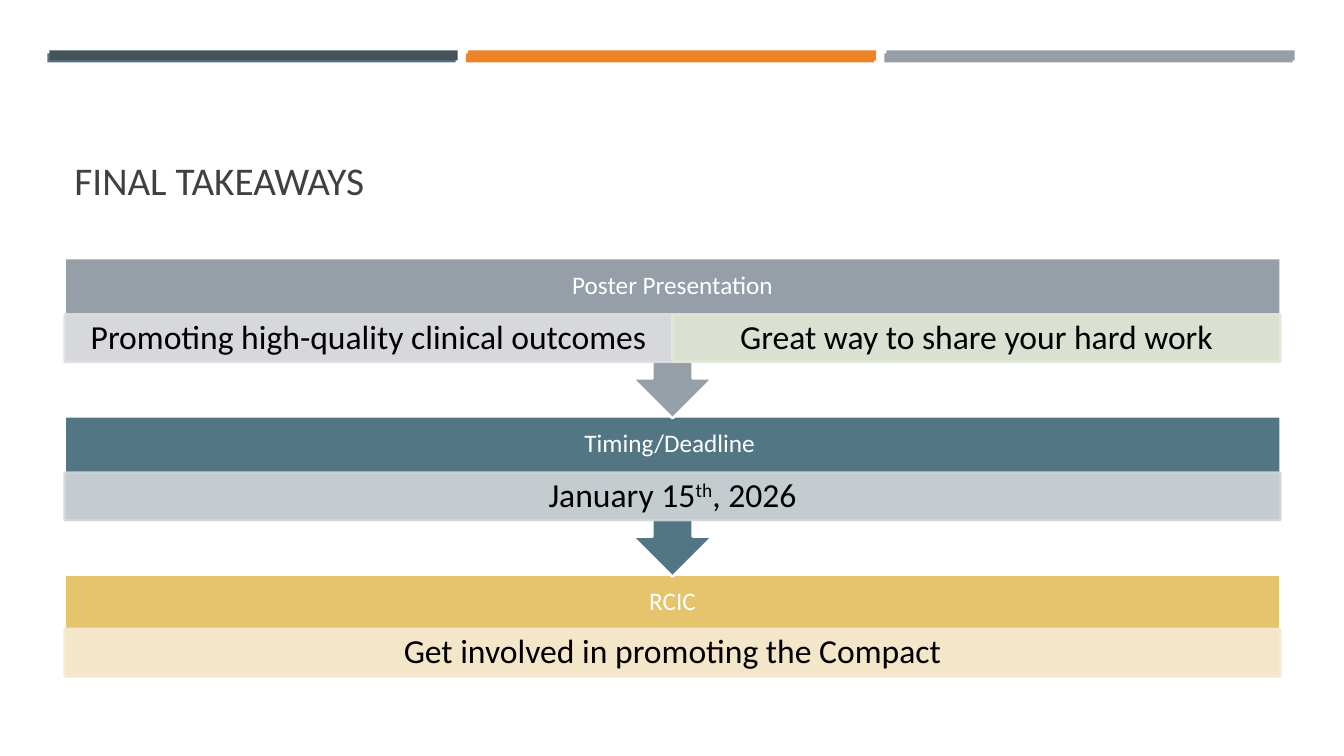
import pptx
import pptx.dml.color
import pptx.enum.shapes
import pptx.enum.text
import pptx.oxml.ns
import pptx.util
from lxml import etree

Inches = pptx.util.Inches
RGBColor = pptx.dml.color.RGBColor
SHAPES = pptx.enum.shapes.MSO_SHAPE
ANCHOR = pptx.enum.text.MSO_ANCHOR
ALIGN = pptx.enum.text.PP_ALIGN

WHITE = RGBColor(0xFF, 0xFF, 0xFF)
BLACK = RGBColor(0x00, 0x00, 0x00)
TITLE_GRAY = RGBColor(0x40, 0x40, 0x40)
SLATE = RGBColor(0x46, 0x53, 0x59)
TEAL = RGBColor(0x53, 0x76, 0x85)
ORANGE = RGBColor(0xED, 0x84, 0x28)
GRAY = RGBColor(0x96, 0x9F, 0xA7)
GOLD = RGBColor(0xE6, 0xC4, 0x6D)
PALE_GRAY = RGBColor(0xDD, 0xDF, 0xE1)
PALE_GREEN = RGBColor(0xE2, 0xE9, 0xD7)
PALE_TEAL = RGBColor(0xD1, 0xD6, 0xD9)
PALE_GOLD = RGBColor(0xF5, 0xEA, 0xD4)

HEADER_HEIGHT = 0.56
DETAIL_HEIGHT = 0.47
BLOCK_HEIGHT = 1.03
CALLOUT_HEIGHT = 1.59
BLOCK_PITCH = 1.57

# Each step: heading, colour, details as (runs of (text, baseline), colour)
STEPS = [
    ("Poster Presentation", GRAY, [
        ([("Promoting high-quality clinical outcomes", 0)], PALE_GRAY),
        ([("Great way to share your hard work", 0)], PALE_GREEN),
    ]),
    ("Timing/Deadline ", TEAL, [
        ([("January 15", 0), ("th", 30), (", 2026", 0)], PALE_TEAL),
    ]),
    ("RCIC", GOLD, [
        ([("Get involved in promoting the Compact", 0)], PALE_GOLD),
    ]),
]


def write_text(shape, runs, size, color, align=ALIGN.CENTER, anchor=ANCHOR.MIDDLE,
               insets=(0.1, 0.05), spacing=1.0):
    """Fill a shape with one paragraph made of (text, baseline) runs."""
    frame = shape.text_frame
    frame.word_wrap = True
    frame.vertical_anchor = anchor
    frame.margin_left = frame.margin_right = Inches(insets[0])
    frame.margin_top = frame.margin_bottom = Inches(insets[1])
    paragraph = frame.paragraphs[0]
    paragraph.alignment = align
    paragraph.line_spacing = spacing
    for text, baseline in runs:
        run = paragraph.add_run()
        run.text = text
        run.font.name = "Calibri"
        run.font.size = pptx.util.Pt(size)
        run.font.color.rgb = color
        if baseline:
            run.font._element.set("baseline", str(baseline * 1000))


def add_text_box(slide, left, top, width, height, text, **text_format):
    box = slide.shapes.add_textbox(Inches(left), Inches(top), Inches(width), Inches(height))
    write_text(box, [(text, 0)], **text_format)


def add_box(slide, kind, left, top, width, height, fill, line=None, opacity=100):
    shape = slide.shapes.add_shape(
        kind, Inches(left), Inches(top), Inches(width), Inches(height))
    shape.shadow.inherit = False
    shape.fill.solid()
    shape.fill.fore_color.rgb = fill
    if line is None:
        shape.line.fill.background()
    else:
        shape.line.color.rgb = line
        shape.line.width = pptx.util.Pt(1.75)
    if opacity < 100:
        for color in shape._element.spPr.iter(pptx.oxml.ns.qn("a:srgbClr")):
            alpha = etree.SubElement(color, pptx.oxml.ns.qn("a:alpha"))
            alpha.set("val", str(opacity * 1000))
    return shape


def add_bars(slide, left, top, height, colors):
    """Three colour bars in a row across the top."""
    for index, color in enumerate(colors):
        add_box(slide, SHAPES.RECTANGLE, left + index * 4.15, top, 4.05, height, color)


def add_step(slide, left, top, width, step, is_last):
    """A heading over its details, with an arrow down to the next step."""
    heading, color, details = step
    if is_last:
        add_box(slide, SHAPES.RECTANGLE, left, top, width, BLOCK_HEIGHT, color, line=WHITE)
    else:
        callout = add_box(slide, SHAPES.UP_ARROW_CALLOUT, left, top, width,
                          CALLOUT_HEIGHT, color, line=WHITE)
        callout.rotation = 180
    add_text_box(slide, left, top, width, HEADER_HEIGHT, heading, size=18, color=WHITE,
                 insets=(0.14, 0.14), spacing=0.9)

    # Details share the width equally; the last block is slightly tighter
    detail_top = top + (0.54 if is_last else HEADER_HEIGHT)
    detail_width = width / len(details)
    for index, (runs, pale) in enumerate(details):
        detail = add_box(slide, SHAPES.RECTANGLE, left + index * detail_width, detail_top,
                         detail_width, DETAIL_HEIGHT, pale, line=pale, opacity=90)
        write_text(detail, runs, size=24, color=BLACK, insets=(0.19, 0.03), spacing=0.9)


def add_steps(slide, left, top, width):
    """Steps from the bottom up, so each arrow lies over the step below."""
    last = len(STEPS) - 1
    for index in range(last, -1, -1):
        add_step(slide, left, top + index * BLOCK_PITCH, width, STEPS[index], index == last)


def main():
    presentation = pptx.Presentation()
    presentation.slide_width = Inches(13.33)
    presentation.slide_height = Inches(7.5)
    slide = presentation.slides.add_slide(presentation.slide_layouts[6])

    # Top bars: a back row and a slightly offset front row
    add_bars(slide, 0.47, 0.53, 0.09, [TEAL, ORANGE, GRAY])
    add_bars(slide, 0.49, 0.5, 0.1, [SLATE, ORANGE, GRAY])

    # Title
    add_text_box(slide, 0.64, 0.77, 12.06, 1.3, "FINAL TAKEAWAYS", size=28,
                 color=TITLE_GRAY, align=ALIGN.LEFT, anchor=ANCHOR.BOTTOM)

    # Process steps
    add_steps(slide, 0.64, 2.56, 12.06)
    presentation.save("out.pptx")


if __name__ == "__main__":
    main()
